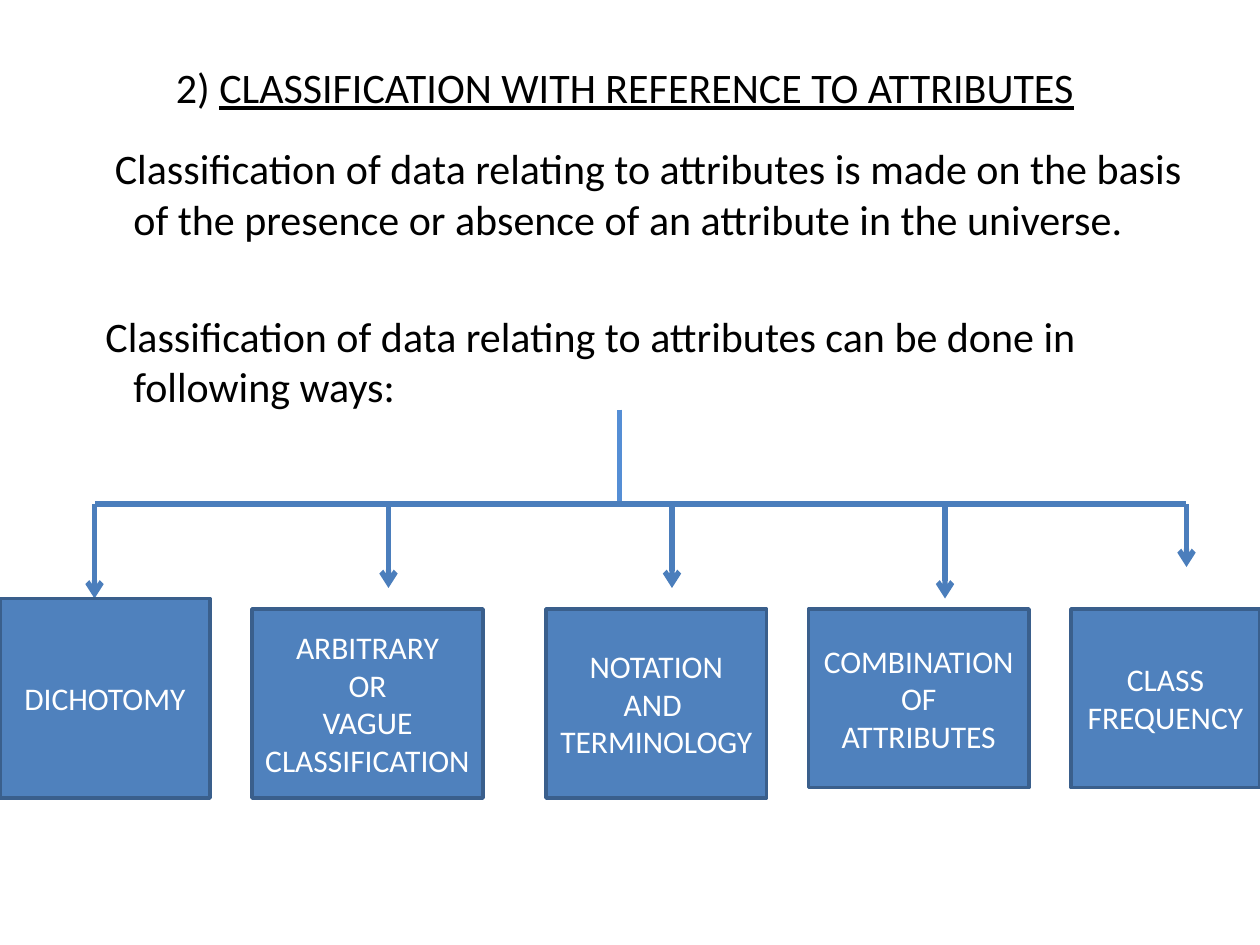
import pptx
import pptx.util
import pptx.dml.color
import pptx.enum.shapes
import pptx.enum.text
import lxml.etree

Pt = pptx.util.Pt
RGB = pptx.dml.color.RGBColor
ALIGN = pptx.enum.text.PP_ALIGN
MIDDLE = pptx.enum.text.MSO_ANCHOR.MIDDLE
NOFIT = pptx.enum.text.MSO_AUTO_SIZE.NONE
KIND = pptx.enum.shapes

BLACK = RGB(0x00, 0x00, 0x00)
WHITE = RGB(0xFF, 0xFF, 0xFF)
FILL = RGB(0x4F, 0x81, 0xBD)
EDGE = RGB(0x3A, 0x5F, 0x8C)
RAIL = RGB(0x4B, 0x7E, 0xBC)
STEM = RGB(0x55, 0x8E, 0xD5)
NS = "http://schemas.openxmlformats.org/drawingml/2006/main"


def write(para, text, size=24, color=BLACK, line=None, align=None):
    run = para.add_run()
    run.text = text
    run.font.name = "Calibri"
    run.font.size = Pt(size)
    run.font.color.rgb = color
    run.font.underline = line
    para.alignment = align


def link(x1, y1, x2, y2, color=RAIL, width=3, arrow=False):
    wire = slide.shapes.add_connector(
        KIND.MSO_CONNECTOR.STRAIGHT, Pt(x1), Pt(y1), Pt(x2), Pt(y2))
    wire.line.color.rgb = color
    wire.line.width = Pt(width)
    if arrow:
        tail = lxml.etree.SubElement(wire.line._get_or_add_ln(), f"{{{NS}}}tailEnd")
        tail.set("type", "arrow")
    lxml.etree.SubElement(wire._element.spPr, f"{{{NS}}}effectLst")


deck = pptx.Presentation()
deck.slide_width, deck.slide_height = Pt(720), Pt(540)
slide = deck.slides.add_slide(deck.slide_layouts[1])

# Title
title = slide.shapes.title
title.left, title.top, title.width, title.height = Pt(18), Pt(21.6), Pt(678), Pt(56.4)
frame = title.text_frame
frame.auto_size = NOFIT
frame.vertical_anchor = MIDDLE
head = frame.paragraphs[0]
write(head, "2) ", align=ALIGN.CENTER)
write(head, "CLASSIFICATION WITH REFERENCE TO ATTRIBUTES", line=True, align=ALIGN.CENTER)

# Body: text, first-line indent, space before
body = slide.placeholders[1]
body.left, body.top, body.width, body.height = Pt(42), Pt(78), Pt(642), Pt(404.4)
frame = body.text_frame
frame.auto_size = NOFIT
notes = [
    ("Classification of data relating to attributes is made on the basis of "
     "the presence or absence of an attribute in the universe.", -10.6, 4.8),
    ("Classification of data relating to attributes can be done in "
     "following ways:", -16, 38),
]
for i, (text, first, gap) in enumerate(notes):
    para = frame.add_paragraph() if i else frame.paragraphs[0]
    write(para, text)
    para.space_before = Pt(gap)
    props = para._p.get_or_add_pPr()
    props.set("marL", str(Pt(27)))
    props.set("indent", str(Pt(first)))
    lxml.etree.SubElement(props, f"{{{NS}}}buNone")

# Stem and rail
top = 288
link(354, 234, 354, top, color=STEM, width=3.25)
link(678, top, 54, top)

# Branches: arrow x and end, box left, top, width and bottom, words
parts = [
    (54, 342, 0, 342, 120, 456, ["DICHOTOMY"]),
    (222, 336, 144, 348, 132, 456, ["ARBITRARY", "OR", "VAGUE", "CLASSIFICATION"]),
    (384, 336, 312, 348, 126, 456, ["NOTATION", "AND ", "TERMINOLOGY"]),
    (540, 342, 462, 348, 126, 450, ["COMBINATION", "OF", "ATTRIBUTES"]),
    (678, 324, 612, 348, 108, 450, ["CLASS", "FREQUENCY"]),
]
for x, end, left, y, width, base, words in parts:
    link(x, top, x, end, arrow=True)
    box = slide.shapes.add_shape(
        KIND.MSO_SHAPE.FLOWCHART_PROCESS, Pt(left), Pt(y), Pt(width), Pt(base - y))
    box.shadow.inherit = False
    box.fill.solid()
    box.fill.fore_color.rgb = FILL
    box.line.color.rgb = EDGE
    box.line.width = Pt(2)
    frame = box.text_frame
    frame.word_wrap = True
    frame.vertical_anchor = MIDDLE
    for i, word in enumerate(words):
        para = frame.add_paragraph() if i else frame.paragraphs[0]
        write(para, word, size=18, color=WHITE, align=ALIGN.CENTER)

deck.save("out.pptx")
